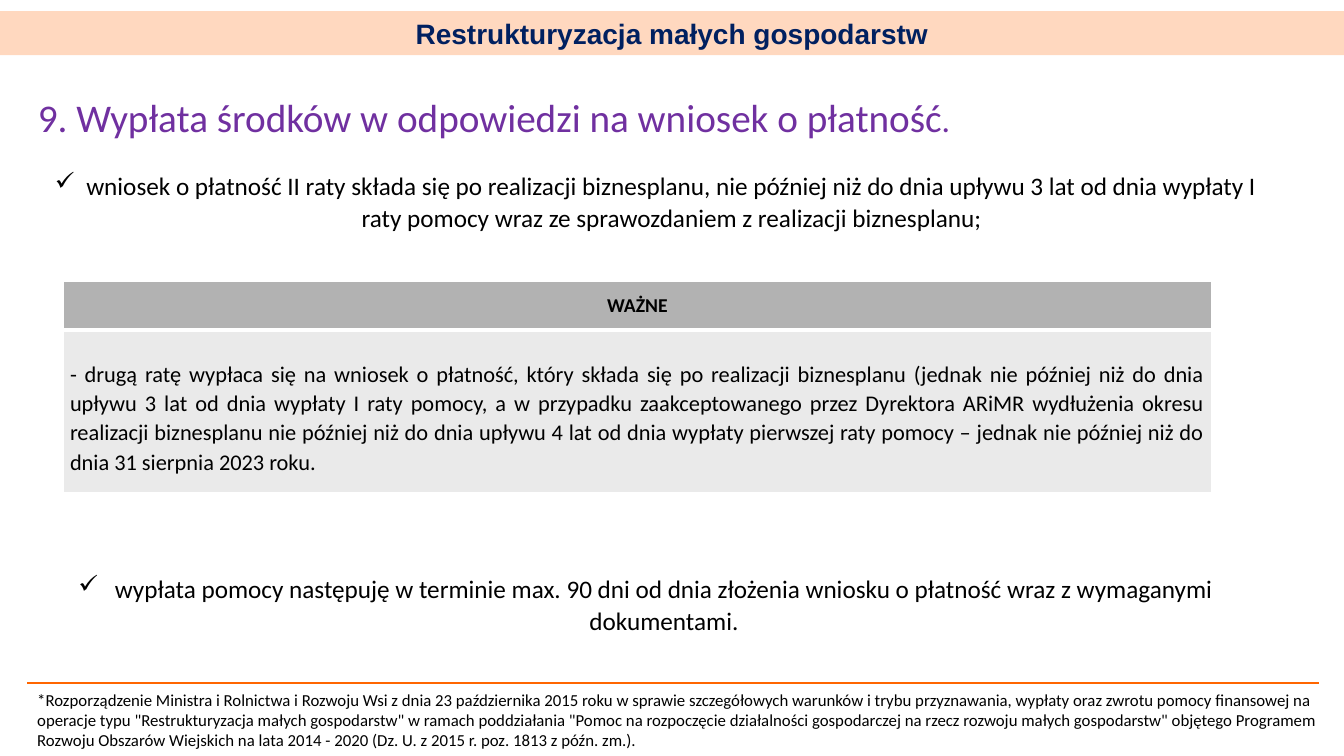
from lxml import etree
from pptx import Presentation
from pptx.dml import color
from pptx.enum import shapes, text
from pptx.oxml import ns
from pptx.util import Pt

BLACK = color.RGBColor(0x00, 0x00, 0x00)
NAVY = color.RGBColor(0x00, 0x20, 0x60)
PURPLE = color.RGBColor(0x70, 0x30, 0xA0)
ORANGE = color.RGBColor(0xFF, 0x66, 0x00)
WHITE = color.RGBColor(0xFF, 0xFF, 0xFF)
HEADER_GREY = color.RGBColor(0xB2, 0xB2, 0xB2)
BODY_GREY = color.RGBColor(0xEA, 0xEA, 0xEA)

CENTER = text.PP_ALIGN.CENTER
JUSTIFY = text.PP_ALIGN.JUSTIFY
LINE_SPACING = 1.07


def add_element(parent, tag, **attributes):
    return etree.SubElement(parent, ns.qn(tag), attributes)


def set_font(font, size, rgb=BLACK, bold=False, name="Calibri"):
    font.name = name
    font.size = Pt(size)
    font.bold = bold
    font.color.rgb = rgb


def add_text_box(page, left, top, width, height, wrap=True):
    """Add a text box that grows with its text; return its first paragraph."""
    box = page.shapes.add_textbox(Pt(left), Pt(top), Pt(width), Pt(height))
    box.text_frame.word_wrap = wrap
    box.text_frame.auto_size = text.MSO_AUTO_SIZE.SHAPE_TO_FIT_TEXT
    return box.text_frame.paragraphs[0]


def add_banner(page, wording):
    banner = page.shapes.add_shape(
        shapes.MSO_SHAPE.RECTANGLE, Pt(0), Pt(8), Pt(960), Pt(31.5))
    banner.shadow.inherit = False
    banner.line.fill.background()
    banner.fill.solid()
    banner.fill.fore_color.rgb = ORANGE
    shade = banner.fill._xPr.find(".//" + ns.qn("a:srgbClr"))
    add_element(shade, "a:alpha", val="25000")
    banner.text_frame.vertical_anchor = text.MSO_ANCHOR.MIDDLE
    para = banner.text_frame.paragraphs[0]
    para.text = wording
    para.alignment = CENTER
    set_font(para.font, 20, NAVY, bold=True, name="Arial")


def add_heading(page, wording, ending):
    para = add_text_box(page, 20, 60.5, 679, 44, wrap=False)
    para.line_spacing = LINE_SPACING
    para.space_after = Pt(8)
    for part, size in ((wording, 28), (ending, 24)):
        span = para.add_run()
        span.text = part
        set_font(span.font, size, PURPLE)


def add_check_item(page, left, top, width, hanging, wording):
    para = add_text_box(page, left, top, width, 54)
    para.text = wording
    para.alignment = CENTER
    para.line_spacing = LINE_SPACING
    para.space_after = Pt(8)
    properties = para._p.get_or_add_pPr()
    properties.set("marL", str(Pt(22.5)))
    properties.set("indent", str(-Pt(hanging)))
    add_element(properties, "a:buChar", char="✓")
    set_font(para.font, 18)


def set_borders(cell, **widths):
    """Draw white borders; widths maps the sides L, R, T, B to points."""
    properties = cell._tc.get_or_add_tcPr()
    for side, width in widths.items():
        line = add_element(properties, "a:ln" + side, w=str(Pt(width)))
        fill = add_element(line, "a:solidFill")
        add_element(fill, "a:srgbClr", val=str(WHITE))


def fill_cell(cell, wording, fill, size, alignment, bold=False):
    cell.fill.solid()
    cell.fill.fore_color.rgb = fill
    cell.margin_left = cell.margin_right = Pt(5)
    cell.margin_top = cell.margin_bottom = Pt(0)
    para = cell.text_frame.paragraphs[0]
    para.text = wording
    para.alignment = alignment
    set_font(para.font, size, bold=bold)
    return para


def add_notice_table(page, title, wording):
    frame = page.shapes.add_table(2, 1, Pt(45), Pt(201), Pt(820.5), Pt(151))
    table = frame.table
    table.horz_banding = False
    table.rows[0].height = Pt(34.5)
    table.rows[1].height = Pt(116.5)
    header, body = table.cell(0, 0), table.cell(1, 0)

    set_borders(header, L=1, R=1, T=1, B=3)
    fill_cell(header, title, HEADER_GREY, 14, CENTER, bold=True)
    header.vertical_anchor = text.MSO_ANCHOR.MIDDLE

    set_borders(body, L=1, R=1, T=3, B=1)
    para = fill_cell(body, wording, BODY_GREY, 16, JUSTIFY)
    para.line_spacing = LINE_SPACING
    body.margin_top = Pt(21)


def add_footnote(page, wording):
    rule = page.shapes.add_connector(
        shapes.MSO_CONNECTOR.STRAIGHT, Pt(19.5), Pt(488), Pt(942), Pt(488))
    rule.line.color.rgb = ORANGE
    rule.line.width = Pt(1)
    add_element(rule._element.spPr, "a:effectLst")
    para = add_text_box(page, 19.5, 489, 940, 51)
    para.text = wording
    set_font(para.font, 12)


def main():
    deck = Presentation()
    deck.slide_width, deck.slide_height = Pt(960), Pt(540)
    page = deck.slides.add_slide(deck.slide_layouts[6])

    add_banner(page, "Restrukturyzacja małych gospodarstw")
    add_heading(
        page, "9. Wypłata środków w odpowiedzi na wniosek o płatność", ".")
    add_check_item(
        page, 31, 116.5, 875, 22.5,
        "wniosek o płatność II raty składa się po realizacji biznesplanu, "
        "nie później niż do dnia upływu 3 lat od dnia wypłaty I raty pomocy "
        "wraz ze sprawozdaniem z realizacji biznesplanu;")
    add_notice_table(
        page, "WAŻNE",
        "- drugą ratę wypłaca się na wniosek o płatność, który składa się po "
        "realizacji biznesplanu (jednak nie później niż do dnia upływu 3 lat "
        "od dnia wypłaty I raty pomocy, a w przypadku zaakceptowanego przez "
        "Dyrektora ARiMR wydłużenia okresu realizacji biznesplanu nie później "
        "niż do dnia upływu 4 lat od dnia wypłaty pierwszej raty pomocy – "
        "jednak nie później niż do dnia 31 sierpnia 2023 roku.")
    add_check_item(
        page, 20, 404.5, 886, 26,
        "wypłata pomocy następuję w terminie max. 90 dni od dnia złożenia "
        "wniosku o płatność wraz z wymaganymi dokumentami.")
    add_footnote(
        page,
        "*Rozporządzenie Ministra i Rolnictwa i Rozwoju Wsi z dnia "
        "23 października 2015 roku w sprawie szczegółowych warunków i trybu "
        "przyznawania, wypłaty oraz zwrotu pomocy finansowej na operacje typu "
        '"Restrukturyzacja małych gospodarstw" w ramach poddziałania "Pomoc '
        "na rozpoczęcie działalności gospodarczej na rzecz rozwoju małych "
        'gospodarstw" objętego Programem Rozwoju Obszarów Wiejskich na lata '
        "2014 - 2020 (Dz. U. z 2015 r. poz. 1813 z późn. zm.).")
    deck.save("out.pptx")


if __name__ == "__main__":
    main()
